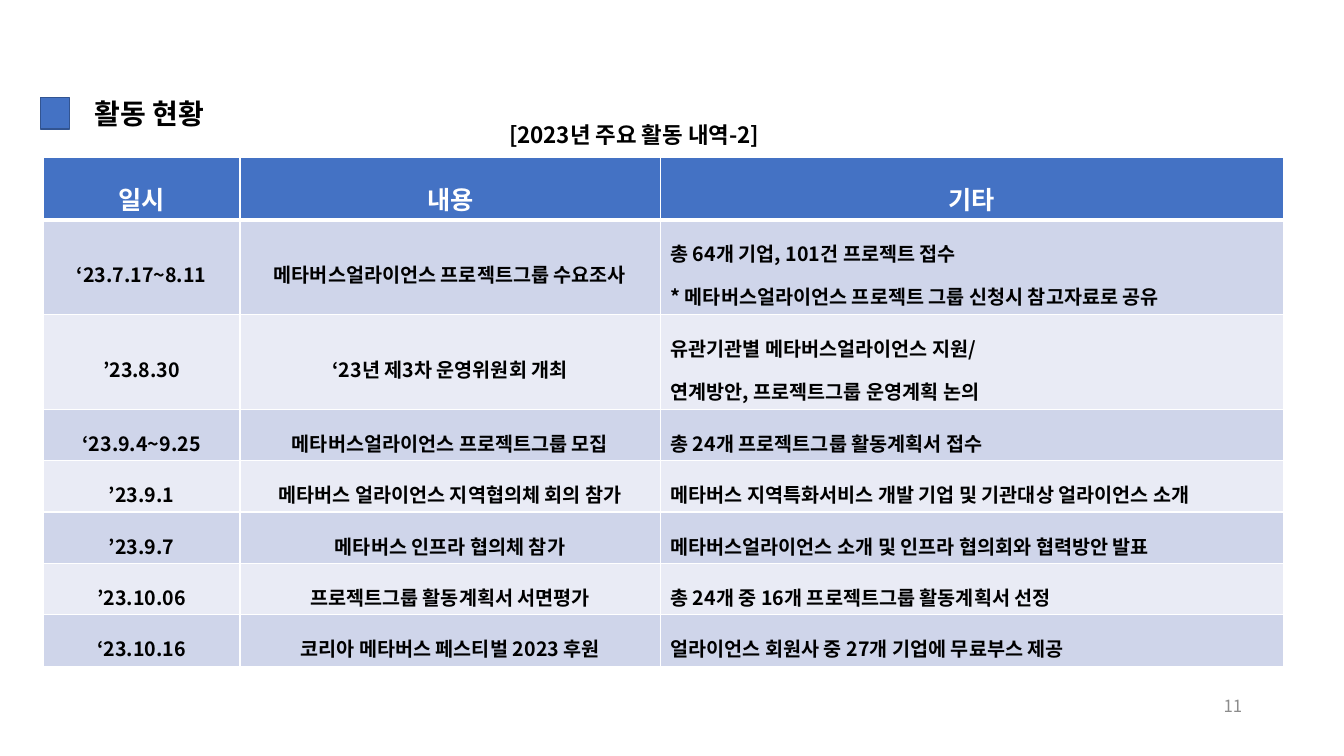
from lxml.etree import SubElement
from pptx import Presentation
from pptx.dml.color import RGBColor
from pptx.enum.shapes import MSO_SHAPE
from pptx.enum.text import MSO_ANCHOR, MSO_AUTO_SIZE, PP_ALIGN
from pptx.oxml.ns import qn
from pptx.util import Inches, Pt

FONT = "Noto Sans CJK KR"
COLORS = {
    "black": "000000", "white": "FFFFFF", "gray": "8C8C8C",
    "blue": "4472C4", "outline": "325491",
    "band_dark": "CFD5EA", "band_light": "E9EBF5",
}

HEADERS = ["일시", "내용", "기타"]
ACTIVITIES = [
    ("‘23.7.17~8.11", "메타버스얼라이언스 프로젝트그룹 수요조사",
     "총 64개 기업, 101건 프로젝트 접수\n* 메타버스얼라이언스 프로젝트 그룹 신청시 참고자료로 공유"),
    ("’23.8.30", "‘23년 제3차 운영위원회 개최",
     "유관기관별 메타버스얼라이언스 지원/\n연계방안, 프로젝트그룹 운영계획 논의"),
    ("‘23.9.4~9.25", "메타버스얼라이언스 프로젝트그룹 모집",
     "총 24개 프로젝트그룹 활동계획서 접수"),
    ("’23.9.1", "메타버스 얼라이언스 지역협의체 회의 참가",
     "메타버스 지역특화서비스 개발 기업 및 기관대상 얼라이언스 소개"),
    ("’23.9.7", "메타버스 인프라 협의체 참가",
     "메타버스얼라이언스 소개 및 인프라 협의회와 협력방안 발표"),
    ("’23.10.06", "프로젝트그룹 활동계획서 서면평가",
     "총 24개 중 16개 프로젝트그룹 활동계획서 선정"),
    ("‘23.10.16", "코리아 메타버스 페스티벌 2023 후원",
     "얼라이언스 회원사 중 27개 기업에 무료부스 제공"),
]


def rgb(name):
    return RGBColor.from_string(COLORS[name])


class SlideBuilder:
    def __init__(self, s, font):
        self.s = s
        self.font = font

    def paragraphs(self, tf, text, size, color="black", bold=True,
                   align=PP_ALIGN.LEFT, spacing=None):
        for i, line in enumerate(text.split("\n")):
            p = tf.add_paragraph() if i else tf.paragraphs[0]
            for key, value in {"alignment": align, "line_spacing": spacing}.items():
                setattr(p, key, value)
            r = p.add_run()
            r.text = line
            for key, value in {"name": self.font, "size": Pt(size), "bold": bold}.items():
                setattr(r.font, key, value)
            r.font.color.rgb = rgb(color)
            # Korean glyphs take the East Asian typeface
            SubElement(r._r.get_or_add_rPr(), qn("a:ea"), typeface=self.font)

    def text(self, box, text, size, wrap=False, anchor=MSO_ANCHOR.TOP, **style):
        tf = self.s.shapes.add_textbox(*map(Inches, box)).text_frame
        fit = MSO_AUTO_SIZE.NONE if wrap else MSO_AUTO_SIZE.SHAPE_TO_FIT_TEXT
        frame = {"word_wrap": wrap, "auto_size": fit, "vertical_anchor": anchor}
        for key, value in frame.items():
            setattr(tf, key, value)
        self.paragraphs(tf, text, size, **style)

    def rect(self, box, fill, line):
        sp = self.s.shapes.add_shape(MSO_SHAPE.RECTANGLE, *map(Inches, box))
        sp.shadow.inherit = False
        sp.fill.solid()
        sp.fill.fore_color.rgb = rgb(fill)
        sp.line.color.rgb = rgb(line)
        sp.line.width = Pt(1)

    def borders(self, cell, widths):
        tcPr = cell._tc.get_or_add_tcPr()
        for side, width in widths.items():
            ln = SubElement(tcPr, qn(f"a:ln{side}"), w=str(Pt(width)))
            fill = SubElement(ln, qn("a:solidFill"))
            SubElement(fill, qn("a:srgbClr"), val=COLORS["white"])

    def table(self, left, top, widths, heights, rows):
        box = map(Inches, (left, top, sum(widths), sum(heights)))
        table = self.s.shapes.add_table(len(rows), len(widths), *box).table
        for column, width in zip(table.columns, widths):
            column.width = Inches(width)
        for i, (height, row) in enumerate(zip(heights, rows)):
            table.rows[i].height = Inches(height)
            header = i == 0
            band = "blue" if header else "band_dark" if i % 2 else "band_light"
            for j, text in enumerate(row):
                cell = table.cell(i, j)
                self.borders(cell, {"L": 1, "R": 1, "T": 3 if i == 1 else 1,
                                    "B": 3 if header else 1})
                cell.fill.solid()
                cell.fill.fore_color.rgb = rgb(band)
                cell.vertical_anchor = MSO_ANCHOR.MIDDLE
                centered = header or j < 2
                self.paragraphs(cell.text_frame, text, 18 if header else 14,
                                color="white" if header else "black", spacing=1.5,
                                align=PP_ALIGN.CENTER if centered else PP_ALIGN.LEFT)


def main():
    prs = Presentation()
    prs.slide_width, prs.slide_height = Inches(13.33), Inches(7.5)
    slide = SlideBuilder(prs.slides.add_slide(prs.slide_layouts[6]), FONT)

    # Section heading
    slide.text((0.84, 0.91, 1.42, 0.44), "활동 현황", 20)

    # Activity table: header, two double-line rows, five single-line rows
    slide.table(0.43, 1.56, [1.95, 4.17, 6.18],
                [0.62] + [0.94] * 2 + [0.51] * 5, [HEADERS] + ACTIVITIES)

    # Table caption
    slide.text((4.95, 1.15, 2.91, 0.37), "[2023년 주요 활동 내역-2]", 16)

    # Page number
    slide.text((9.42, 6.8, 3, 0.4), "11", 12, wrap=True, anchor=MSO_ANCHOR.MIDDLE,
               color="gray", bold=False, align=PP_ALIGN.RIGHT)

    # Heading marker
    slide.rect((0.4, 0.97, 0.29, 0.31), "blue", "outline")

    prs.save("out.pptx")


if __name__ == "__main__":
    main()
